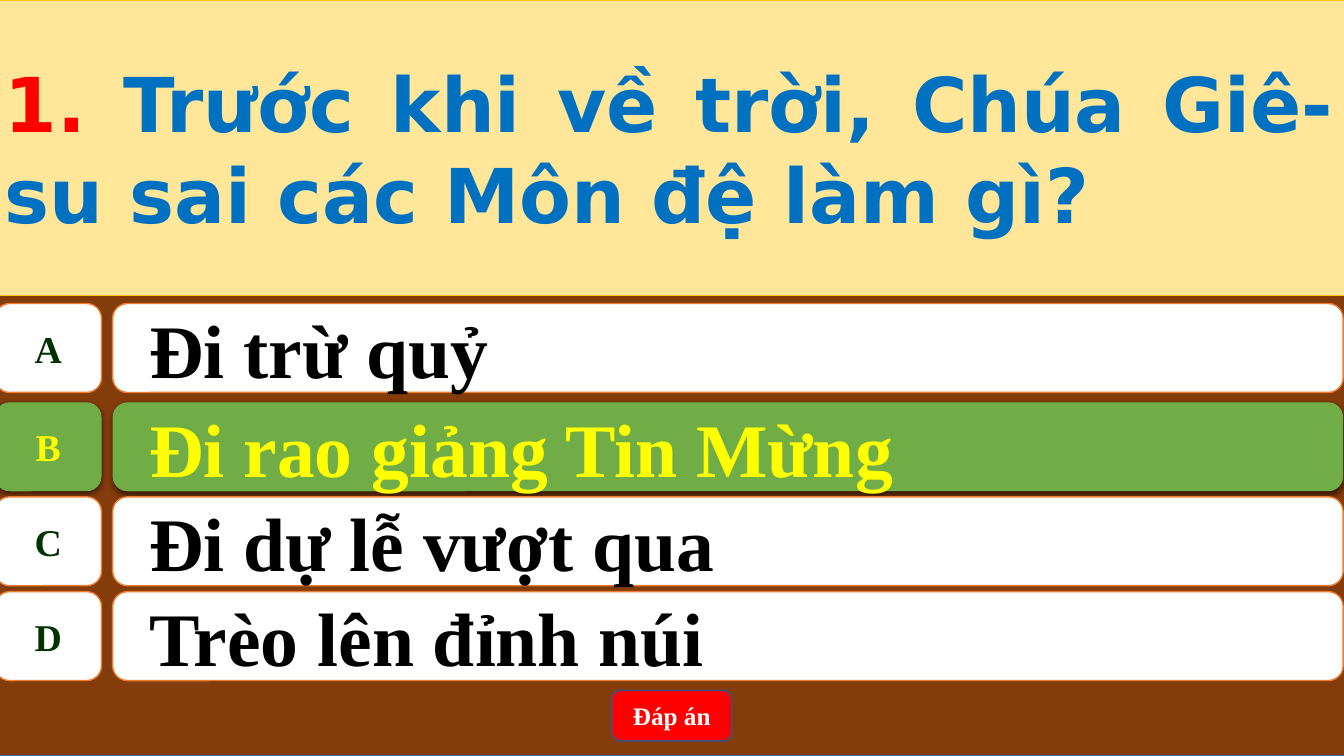
"""Build a quiz slide with one question, four answers and the correct one highlighted."""
from lxml import etree
from pptx import Presentation
from pptx.dml.color import RGBColor
from pptx.enum.shapes import MSO_SHAPE
from pptx.enum.text import MSO_ANCHOR, PP_ALIGN
from pptx.oxml import parse_xml
from pptx.util import Cm, Pt

BROWN = RGBColor(0x84, 0x3C, 0x0B)
STEEL = RGBColor(0x43, 0x73, 0x9E)
CREAM = RGBColor(0xFF, 0xE6, 0x99)
GOLD = RGBColor(0xFF, 0xC0, 0x00)
WHITE = RGBColor(0xFF, 0xFF, 0xFF)
BLACK = RGBColor(0x00, 0x00, 0x00)
ORANGE = RGBColor(0xED, 0x7D, 0x31)
GREEN = RGBColor(0x70, 0xAD, 0x47)
DARK_GREEN = RGBColor(0x00, 0x33, 0x00)
YELLOW = RGBColor(0xFF, 0xFF, 0x00)
RED = RGBColor(0xFF, 0x00, 0x00)
BLUE = RGBColor(0x00, 0x70, 0xC0)
NAVY = RGBColor(0x32, 0x54, 0x91)
SERIF, SANS = "Times New Roman", "DejaVu Sans"
SHADOW = (
    '<a:effectLst xmlns:a="http://schemas.openxmlformats.org/drawingml/2006/main">'
    '<a:outerShdw blurRad="57150" dist="19050" dir="5400000" algn="ctr" rotWithShape="0">'
    '<a:srgbClr val="000000"><a:alpha val="63000"/></a:srgbClr>'
    '</a:outerShdw></a:effectLst>'
)

prs = Presentation()
prs.slide_width, prs.slide_height = Cm(33.87), Cm(19.05)
s = prs.slides.add_slide(prs.slide_layouts[6])


def add_box(kind, left, top, width, height, fill, line, line_width=1):
    sp = s.shapes.add_shape(kind, Cm(left), Cm(top), Cm(width), Cm(height))
    sp.shadow.inherit = False
    sp.fill.solid()
    sp.fill.fore_color.rgb = fill
    if line is None:
        sp.line.fill.background()
    else:
        sp.line.color.rgb = line
        sp.line.width = Pt(line_width)
    return sp


def add_text(sp, runs, size, font, align, wrap=True):
    tf = sp.text_frame
    tf.word_wrap = wrap
    tf.vertical_anchor = MSO_ANCHOR.MIDDLE
    p = tf.paragraphs[0]
    p.alignment = align
    for text, color in runs:
        r = p.add_run()
        r.text = text
        r.font.size = Pt(size)
        r.font.name = font
        r.font.bold = True
        r.font.color.rgb = color
    return p


add_box(MSO_SHAPE.RECTANGLE, -0.13, 0, 34.01, 19.05, BROWN, STEEL)

question = add_box(MSO_SHAPE.RECTANGLE, -0.13, 0, 34.01, 7.44, CREAM, GOLD, 0.5)
add_text(question, [("1. ", RED), ("Trước khi về trời, Chúa Giê-su sai các Môn đệ làm gì?", BLUE)],
         54, SANS, PP_ALIGN.JUSTIFY)

answers = [
    ("A", "Đi trừ quỷ", 7.65),
    ("B", "Đi rao giảng Tin Mừng", 10.14),
    ("C", "Đi dự lễ vượt qua", 12.52),
    ("D", "Trèo lên đỉnh núi", 14.91),
]
correct = "B"

for letter, answer, top in answers:
    is_correct = letter == correct
    fill, line = (GREEN, None) if is_correct else (WHITE, ORANGE)
    letter_color, answer_color = (YELLOW, YELLOW) if is_correct else (DARK_GREEN, BLACK)

    badge = add_box(MSO_SHAPE.FLOWCHART_ALTERNATE_PROCESS, -0.13, top, 2.69, 2.24, fill, line)
    add_text(badge, [(letter, letter_color)], 27, SERIF, PP_ALIGN.CENTER, wrap=False)

    bar = add_box(MSO_SHAPE.ROUNDED_RECTANGLE, 2.84, top, 31.01, 2.24, fill, line)
    p = add_text(bar, [(answer, answer_color)], 54, SERIF, PP_ALIGN.LEFT)
    p.level = 1
    pPr = p._p.get_or_add_pPr()
    pPr.set("marL", str(Cm(1.27)))
    pPr.set("indent", str(Cm(-0.71)))

    if is_correct:
        for sp in (badge, bar):
            effects = sp._element.spPr.find("{*}effectLst")
            sp._element.spPr.replace(effects, parse_xml(SHADOW))

button = add_box(MSO_SHAPE.ROUNDED_RECTANGLE, 15.42, 17.4, 3.02, 1.27, RED, NAVY)
add_text(button, [("Đáp án", WHITE)], 18, SERIF, PP_ALIGN.CENTER)

prs.save("out.pptx")
